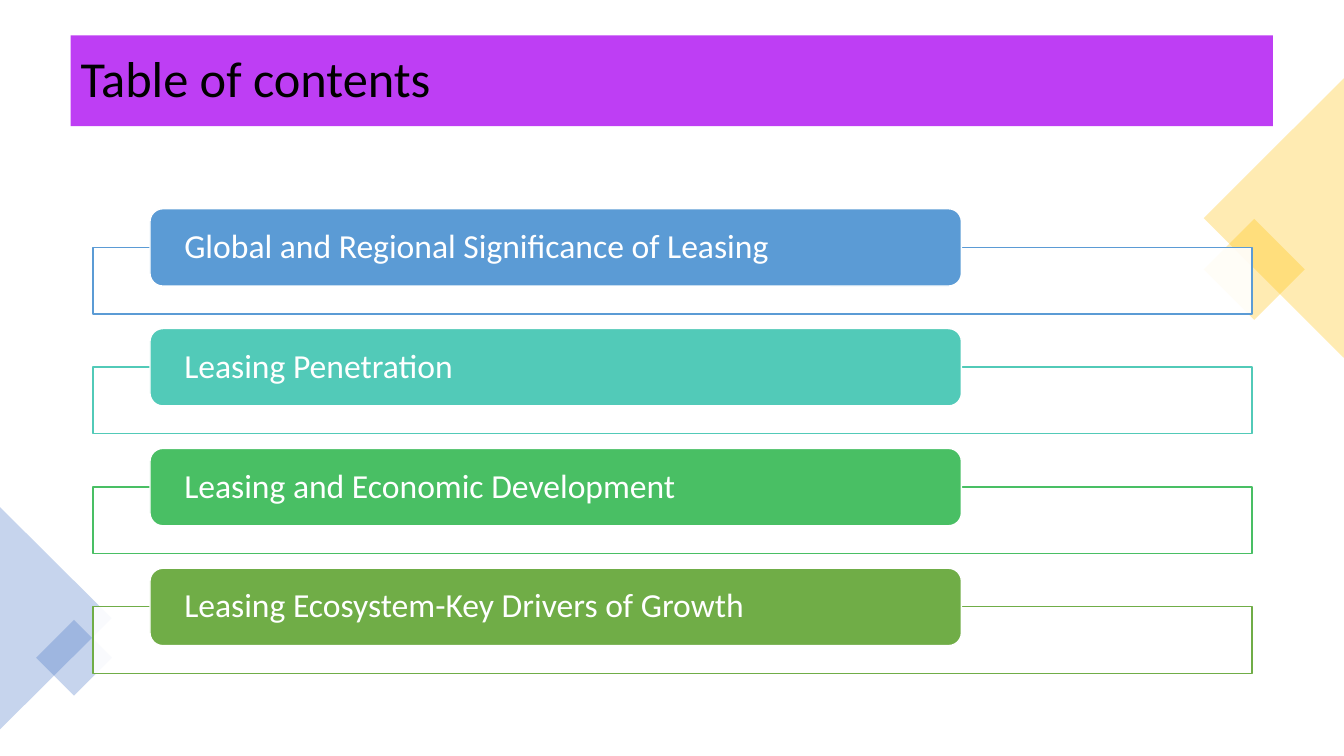
from lxml import etree
from pptx import Presentation
from pptx.dml.color import RGBColor
from pptx.enum import shapes, text
from pptx.oxml.ns import qn
from pptx.util import Cm, Pt

SHAPE = shapes.MSO_SHAPE

prs = Presentation()
prs.slide_width, prs.slide_height = Cm(33.87), Cm(19.05)
s = prs.slides.add_slide(prs.slide_layouts[6])


def add_box(kind, box, fill, opacity=100, line=None, rotation=0):
    sp = s.shapes.add_shape(kind, *[Cm(v) for v in box])
    sp.shadow.inherit = False
    sp.rotation = rotation
    sp.fill.solid()
    sp.fill.fore_color.rgb = RGBColor.from_string(fill)
    if opacity < 100:
        color = sp.fill._xPr.find(qn("a:solidFill"))[0]
        etree.SubElement(color, qn("a:alpha"), val=str(opacity * 1000))
    if line:
        sp.line.color.rgb = RGBColor.from_string(line)
        sp.line.width = Pt(1)
    else:
        sp.line.fill.background()
    return sp


def write(sp, words, size, color, inset):
    tf = sp.text_frame
    tf.word_wrap = True
    tf.vertical_anchor = text.MSO_ANCHOR.MIDDLE
    tf.margin_left = tf.margin_right = Cm(inset)
    tf.margin_top = tf.margin_bottom = 0
    p = tf.paragraphs[0]
    p.alignment = text.PP_ALIGN.LEFT
    p.line_spacing = 0.9
    r = p.add_run()
    r.text = words
    r.font.name = "Calibri"
    r.font.size = Pt(size)
    r.font.color.rgb = RGBColor.from_string(color)


# Title bar
title = add_box(SHAPE.RECTANGLE, (1.78, 0.89, 30.3, 2.29), "BE3EF4")
write(title, "Table of contents", size=36, color="000000", inset=0.25)

# Translucent corner ornaments
ornaments = [
    (SHAPE.RECTANGLE, (30.71, 5.89, 1.8, 1.8), "FFC000", 45),
    (SHAPE.ISOSCELES_TRIANGLE, (28.58, 3.73, 7.04, 3.53), "FFC000", 270),
    (SHAPE.ISOSCELES_TRIANGLE, (-1.4, 14.17, 5.61, 2.82), "4472C4", 90),
    (SHAPE.RECTANGLE, (1.19, 15.9, 1.35, 1.35), "4472C4", 45),
]
for kind, box, color, angle in ornaments:
    add_box(kind, box, color, opacity=30, rotation=angle)

# Contents: an outlined frame with a label on its top edge
topics = [
    ("Global and Regional Significance of Leasing", "5B9BD5"),
    ("Leasing Penetration", "52CAB8"),
    ("Leasing and Economic Development", "49BF64"),
    ("Leasing Ecosystem-Key Drivers of Growth", "70AD47"),
]
for i, (topic, color) in enumerate(topics):
    top = 5.26 + i * 3.02
    add_box(SHAPE.RECTANGLE, (2.34, top + 0.97, 29.21, 1.68), "FFFFFF", opacity=90, line=color)
    label = add_box(SHAPE.ROUNDED_RECTANGLE, (3.78, top, 20.45, 1.95), color, line="FFFFFF")
    write(label, topic, size=24, color="FFFFFF", inset=0.77)

prs.save("out.pptx")
